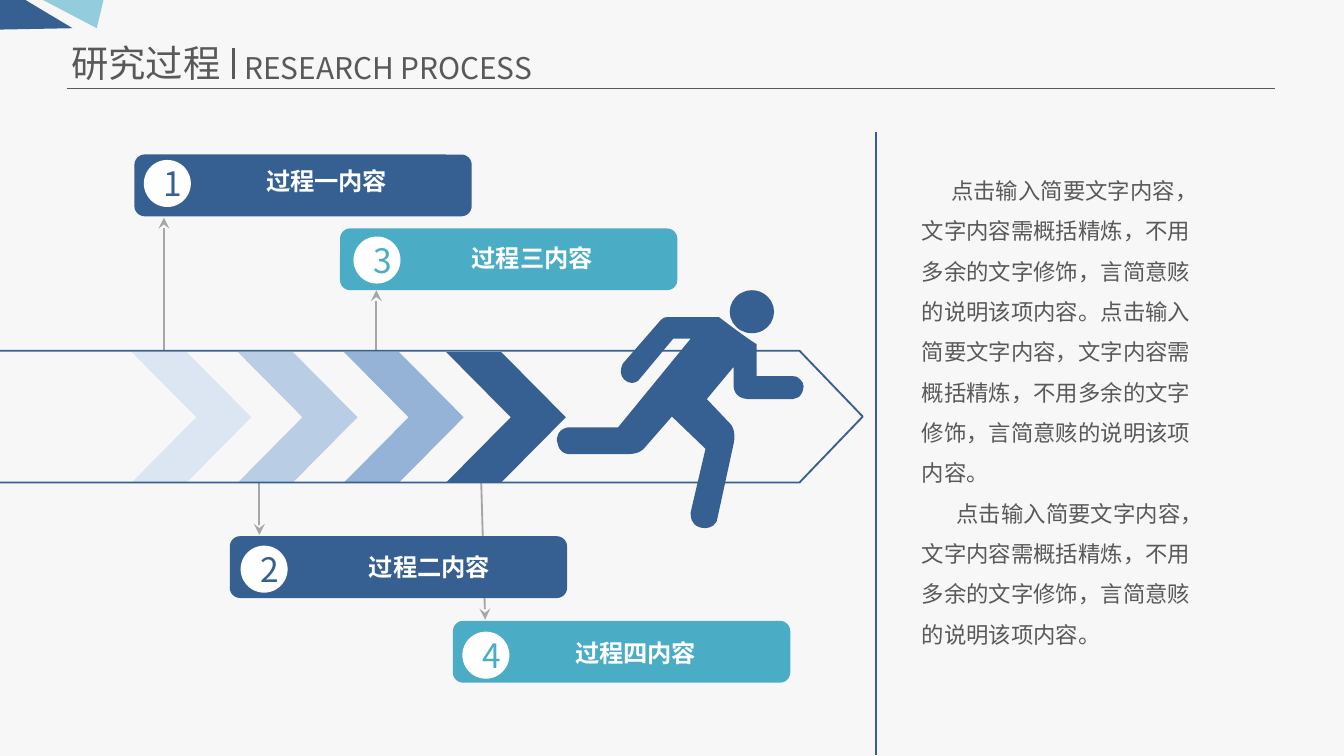
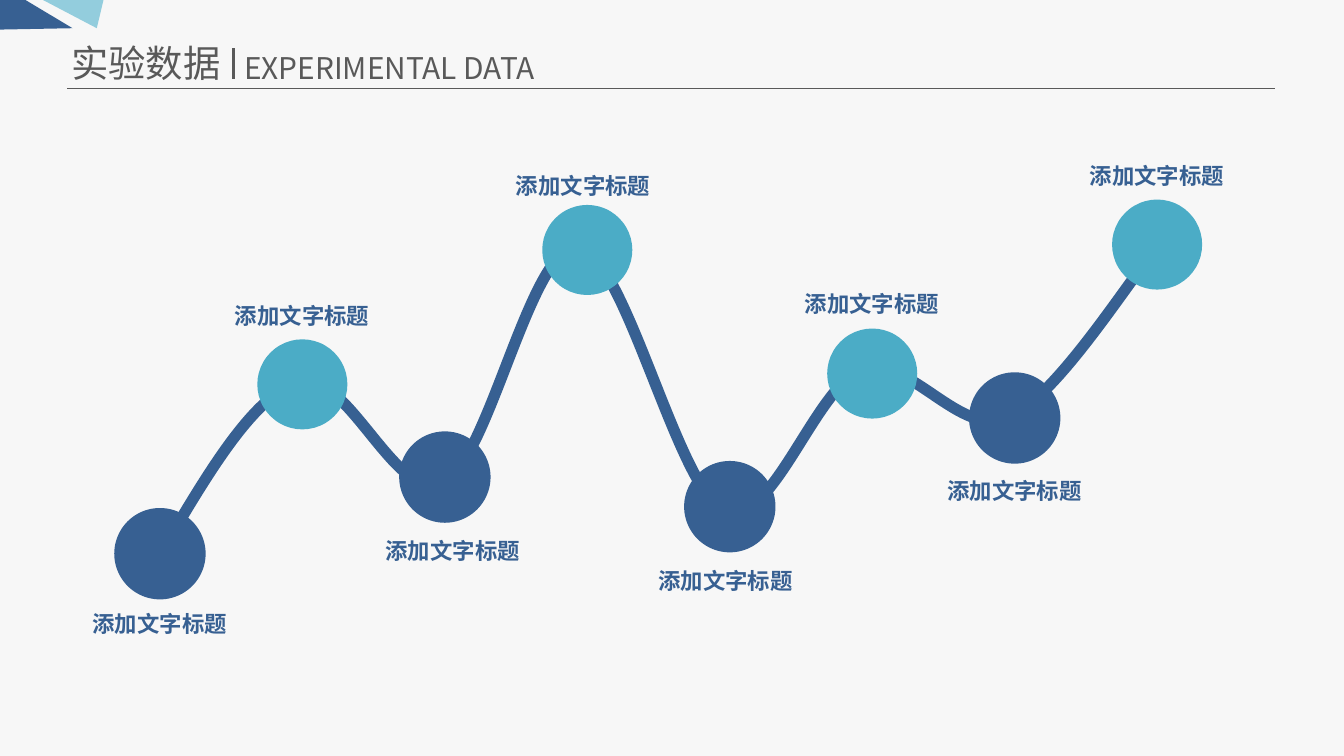
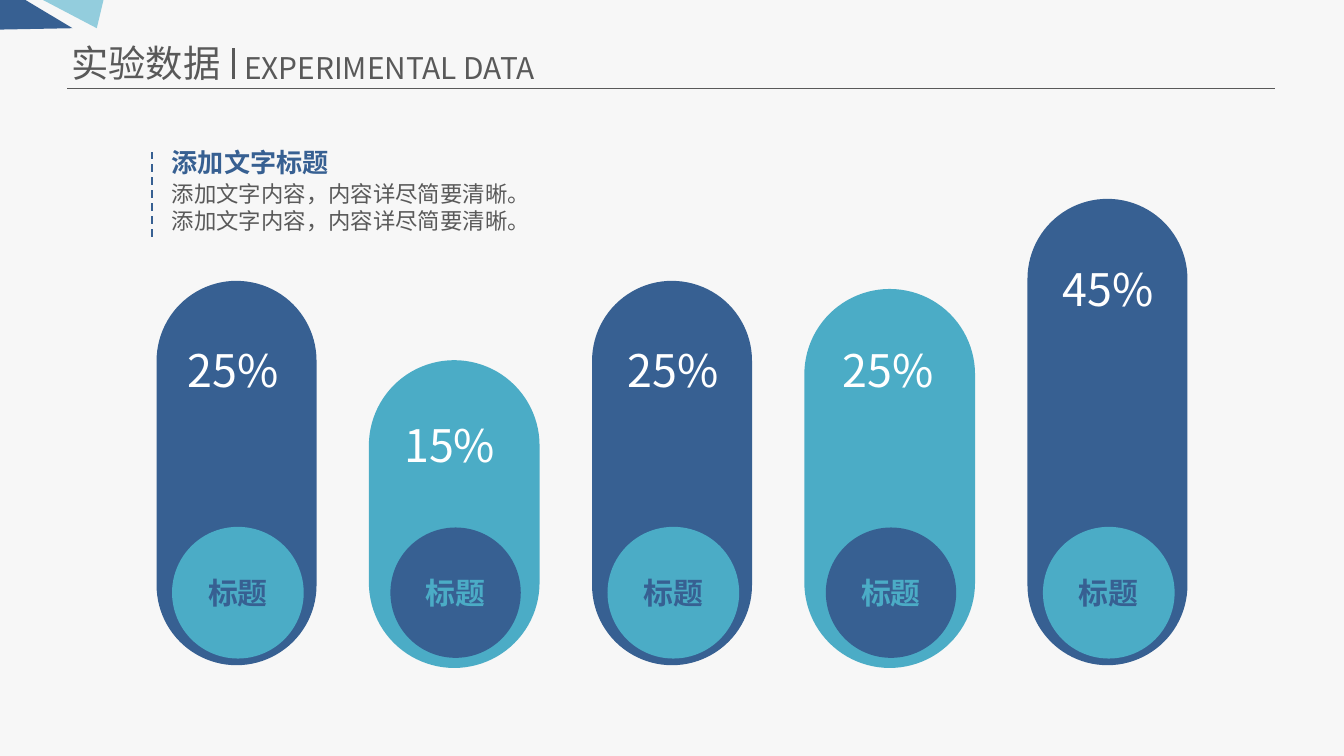
from lxml import etree
from pptx import Presentation
from pptx.dml.color import RGBColor
from pptx.enum.dml import MSO_LINE
from pptx.enum.shapes import MSO_CONNECTOR, MSO_SHAPE
from pptx.enum.text import MSO_AUTO_SIZE, PP_ALIGN
from pptx.oxml.ns import qn
from pptx.util import Inches, Pt

STRAIGHT = MSO_CONNECTOR.STRAIGHT
OVAL = MSO_SHAPE.OVAL
ROUNDED = MSO_SHAPE.ROUNDED_RECTANGLE
CHEVRON = MSO_SHAPE.CHEVRON
PENTAGON = MSO_SHAPE.PENTAGON
DASH = MSO_LINE.DASH
CENTER = PP_ALIGN.CENTER
GROW = MSO_AUTO_SIZE.SHAPE_TO_FIT_TEXT

FONT = "Noto Sans CJK SC"
BACKGROUND = "F7F7F7"
BLUE = "376092"
TEAL = "4BACC6"
LIGHT_TEAL = "93CDDD"
GREY = "595959"
ARROW_GREY = "A6A6A6"
WHITE = "FFFFFF"
color = RGBColor.from_string


def paint(shape, fill=None, line=None, width=1):
    shape.shadow.inherit = False
    if fill:
        shape.fill.solid()
        shape.fill.fore_color.rgb = color(fill)
    else:
        shape.fill.background()
    if line:
        shape.line.color.rgb = color(line)
        shape.line.width = Pt(width)
    else:
        shape.line.fill.background()
    return shape


def write(shape, lines, size, text_color, bold=False, alignment=None):
    """Fill a shape with one paragraph per line and return its text frame."""
    frame = shape.text_frame
    formats = {"name": FONT, "size": Pt(size), "bold": bold}
    for index, line in enumerate(lines):
        paragraph = frame.add_paragraph() if index else frame.paragraphs[0]
        paragraph.alignment = alignment
        run = paragraph.add_run()
        run.text = line
        run.font.color.rgb = color(text_color)
        for name, value in formats.items():
            setattr(run.font, name, value)
        etree.SubElement(run.font._element, qn("a:ea"), typeface=FONT)
    return frame


presentation = Presentation()
presentation.slide_width = Inches(10)
presentation.slide_height = Inches(10) * 9 // 16
master_fill = presentation.slide_master.background.fill
master_fill.solid()
master_fill.fore_color.rgb = color(BACKGROUND)

# Shared frame: corner triangles, title and its rules
titles = [
    ("研究过程", "RESEARCH PROCESS", 2.42),
    ("实验数据", "EXPERIMENTAL DATA", 2.49),
    ("实验数据", "EXPERIMENTAL DATA", 2.49),
]
corners = [
    (LIGHT_TEAL, [(0.32, 0), (0.72, 0.21), (0.77, 0)]),
    (BLUE, [(0.54, 0.21), (0.19, 0), (0, 0), (0, 0.22)]),
]
connectors = []
for chinese, english, english_width in titles:
    slide = presentation.slides.add_slide(presentation.slide_layouts[6])
    for fill, points in corners:
        start, *rest = [(Inches(x), Inches(y)) for x, y in points]
        builder = slide.shapes.build_freeform(*start)
        builder.add_line_segments(rest)
        paint(builder.convert_to_shape(), fill)
    for text, box, size in [
        (chinese, (0.43, 0.25, 1.32, 0.44), 20),
        (english, (1.72, 0.32, english_width, 0.37), 16),
    ]:
        title = slide.shapes.add_textbox(*map(Inches, box))
        frame = write(title, [text], size, GREY)
        frame.word_wrap = False
        frame.auto_size = GROW
    connectors += [
        (slide, (0.5, 0.66, 9.49, 0.66), GREY, 0.75, None),
        (slide, (1.74, 0.36, 1.74, 0.59), GREY, 1.5, None),
    ]

process_slide, curve_slide, pillar_slide = presentation.slides
connectors += [
    (process_slide, (6.52, 0.98, 6.52, 5.62), BLUE, 1, None),
    (process_slide, (2.8, 2.16, 2.8, 2.61), ARROW_GREY, 1, "arrow"),
    (process_slide, (1.22, 1.62, 1.22, 2.61), ARROW_GREY, 1, "arrow"),
    (process_slide, (3.61, 4.61, 3.58, 3.57), ARROW_GREY, 1, "arrow"),
    (process_slide, (1.93, 3.98, 1.93, 3.57), ARROW_GREY, 1, "arrow"),
    (pillar_slide, (1.13, 1.76, 1.13, 1.13), BLUE, 1, "dash"),
]
for slide, ends, line_color, width, style in connectors:
    connector = slide.shapes.add_connector(STRAIGHT, *map(Inches, ends))
    connector.line.color.rgb = color(line_color)
    connector.line.width = Pt(width)
    if style == "dash":
        connector.line.dash_style = DASH
    if style == "arrow":
        etree.SubElement(connector.line._get_or_add_ln(), qn("a:headEnd"), type="stealth")
    etree.SubElement(connector._element.spPr, qn("a:effectLst"))

# Slide 1: process band
for left, fill in [(0.98, "DCE6F2"), (1.77, "B9CDE5"), (2.56, "95B3D7"), (3.32, BLUE)]:
    box = (left, 2.62, 0.89, 0.97)
    chevron = paint(process_slide.shapes.add_shape(CHEVRON, *map(Inches, box)), fill)
    chevron.adjustments[0] = 0.54
band_box = (-0.04, 2.61, 6.46, 0.98)
band = paint(process_slide.shapes.add_shape(PENTAGON, *map(Inches, band_box)), line=BLUE)
band.adjustments[0] = 0.48

# Curved outlines: a pair is a straight step, six numbers are a Bézier step
runner = [
    (4.25, 3.18), (4.6, 3.18), (5.14, 2.52), (5.01, 2.52), (4.76, 2.82),
    (4.75, 2.84, 4.72, 2.85, 4.7, 2.85),
    (4.66, 2.85, 4.62, 2.81, 4.62, 2.77),
    (4.62, 2.74, 4.63, 2.71, 4.64, 2.7),
    (4.91, 2.39),
    (4.93, 2.37, 4.94, 2.36, 4.97, 2.36),
    (5.35, 2.36),
    (5.35, 2.36, 5.6, 2.55, 5.63, 2.56),
    (5.63, 2.8), (5.9, 2.8),
    (5.93, 2.8, 5.94, 2.81, 5.95, 2.82),
    (5.99, 2.85, 5.99, 2.9, 5.95, 2.95),
    (5.94, 2.96, 5.93, 2.96, 5.9, 2.97),
    (5.56, 2.97),
    (5.46, 2.96, 5.46, 2.88, 5.46, 2.88),
    (5.46, 2.73), (5.26, 2.97), (5.44, 3.16),
    (5.44, 3.16, 5.48, 3.21, 5.46, 3.3),
    (5.34, 3.85),
    (5.34, 3.9, 5.29, 3.93, 5.25, 3.93),
    (5.18, 3.93, 5.14, 3.89, 5.14, 3.83),
    (5.14, 3.82, 5.14, 3.81, 5.14, 3.81),
    (5.25, 3.34), (5, 3.1), (4.79, 3.34),
    (4.79, 3.34, 4.76, 3.38, 4.67, 3.38),
    (4.24, 3.38),
    (4.2, 3.38, 4.16, 3.36, 4.15, 3.3),
    (4.13, 3.25, 4.16, 3.19, 4.23, 3.18),
]
wave = [
    (1.53, 3.55, 1.88, 2.94, 2.23, 2.84),
    (2.59, 2.75, 2.95, 3.76, 3.3, 3.59),
    (3.64, 3.43, 3.95, 1.81, 4.3, 1.84),
    (4.65, 1.88, 5.04, 3.65, 5.39, 3.8),
    (5.74, 3.95, 6.07, 2.86, 6.42, 2.75),
    (6.77, 2.64, 7.14, 3.26, 7.5, 3.11),
    (7.86, 2.96, 8.41, 2.07, 8.61, 1.84),
]
for slide, start, steps, fill, line, closed in [
    (process_slide, (4.23, 3.18), runner, BLUE, None, True),
    (curve_slide, (1.17, 4.16), wave, None, BLUE, False),
]:
    numbers = [Inches(n) for step in steps for n in (step if len(step) == 6 else step * 3)]
    builder = slide.shapes.build_freeform(*map(Inches, start))
    builder.add_line_segments(list(zip(numbers[::2], numbers[1::2])), close=closed)
    shape = paint(builder.convert_to_shape(), fill, line, 6)
    outline = shape._element.find(".//" + qn("a:path"))
    segments = outline.findall(qn("a:lnTo"))
    for index in range(0, len(steps) * 3, 3):
        curve = etree.Element(qn("a:cubicBezTo"))
        outline.insert(outline.index(segments[index]), curve)
        for segment in segments[index:index + 3]:
            curve.append(segment[0])
            outline.remove(segment)

head_box = (5.43, 2.16, 0.33, 0.32)
paint(process_slide.shapes.add_shape(OVAL, *map(Inches, head_box)), BLUE)

# Slide 1: numbered cards and description
cards = [
    ("1", "过程一内容", BLUE, (1, 1.15), (1.07, 1.19), (1.35, 1.24, 2.16)),
    ("2", "过程二内容", BLUE, (1.71, 3.99), (1.79, 4.06), (2.18, 4.11, 2.03)),
    ("3", "过程三内容", TEAL, (2.53, 1.7), (2.63, 1.76), (2.92, 1.81, 2.08)),
    ("4", "过程四内容", TEAL, (3.37, 4.62), (3.44, 4.7), (3.65, 4.75, 2.16)),
]
for number, name, fill, card_corner, badge_corner, label_place in cards:
    card_box = (*card_corner, 2.51, 0.46)
    paint(process_slide.shapes.add_shape(ROUNDED, *map(Inches, card_box)), fill)
    badge_box = (*badge_corner, 0.35, 0.35)
    badge = paint(process_slide.shapes.add_shape(OVAL, *map(Inches, badge_box)), WHITE)
    write(badge, [number], 18, fill, alignment=CENTER)
    label = process_slide.shapes.add_textbox(*map(Inches, (*label_place, 0.22)))
    frame = write(label, [name], 13, WHITE, True, CENTER)
    frame.word_wrap = True
    frame.auto_size = GROW
    for side in ("left", "top", "right", "bottom"):
        setattr(frame, f"margin_{side}", 0)

description = process_slide.shapes.add_textbox(*map(Inches, (6.76, 1.17, 2.36, 3.7)))
sentence = "点击输入简要文字内容，文字内容需概括精炼，不用多余的文字修饰，言简意赅的说明该项内容。"
frame = write(description, [sentence * 2, sentence], 12, GREY)
frame.word_wrap = True
frame.auto_size = GROW
for paragraph, indent in zip(frame.paragraphs, (0.22, 0.26)):
    paragraph.line_spacing = 1.5
    paragraph._p.get_or_add_pPr().set("indent", str(Inches(indent)))

# Slide 2: nodes on the curve, (centre height, label left, label top)
nodes = [
    (4.12, 0.59, 4.49), (2.86, 1.65, 2.2), (3.55, 2.77, 3.95), (1.86, 3.74, 1.23),
    (3.77, 4.8, 4.17), (2.78, 5.89, 2.11), (3.11, 6.95, 3.5), (1.82, 8.01, 1.16),
]
for index, (middle, label_left, label_top) in enumerate(nodes):
    fill, diameter = (TEAL, 0.67) if index % 2 else (BLUE, 0.68)
    center = 1.19 + 1.06 * index
    box = (center - diameter / 2, middle - diameter / 2, diameter, diameter)
    paint(curve_slide.shapes.add_shape(OVAL, *map(Inches, box)), fill)
    label = curve_slide.shapes.add_textbox(*map(Inches, (label_left, label_top, 1.21, 0.3)))
    frame = write(label, ["添加文字标题"], 12, BLUE, True)
    frame.word_wrap = False
    frame.auto_size = GROW

# Slide 3: pillars, (value, top, height, value left, value top)
pillars = [
    ("25%", 2.09, 2.86, 1.3, 2.5),
    ("15%", 2.68, 2.29, 2.91, 3.06),
    ("25%", 2.09, 2.86, 4.57, 2.5),
    ("25%", 2.15, 2.82, 6.17, 2.5),
    ("45%", 1.48, 3.47, 7.81, 1.9),
]
for index, (value, top, height, value_left, value_top) in enumerate(pillars):
    fill, accent, width, diameter = (
        (TEAL, BLUE, 1.27, 0.97) if index % 2 else (BLUE, TEAL, 1.19, 0.98)
    )
    center = 1.76 + 1.62 * index
    box = (center - width / 2, top, width, height)
    pillar = paint(pillar_slide.shapes.add_shape(ROUNDED, *map(Inches, box)), fill)
    pillar.adjustments[0] = 0.5
    badge_box = (center + 0.01 - diameter / 2, 4.41 - diameter / 2, diameter, diameter)
    badge = paint(pillar_slide.shapes.add_shape(OVAL, *map(Inches, badge_box)), accent)
    write(badge, ["标题"], 16, fill, True, CENTER)
    label = pillar_slide.shapes.add_textbox(*map(Inches, (value_left, value_top, 0.9, 0.5)))
    frame = write(label, [value], 24, WHITE)
    frame.word_wrap = False
    frame.auto_size = GROW

for lines, box, size, text_color, bold in [
    (["添加文字标题"], (1.18, 1.04, 1.38, 0.34), 14, BLUE, True),
    (["添加文字内容，内容详尽简要清晰。"] * 2, (1.18, 1.29, 2.89, 0.5), 12, GREY, False),
]:
    note = pillar_slide.shapes.add_textbox(*map(Inches, box))
    frame = write(note, lines, size, text_color, bold)
    frame.word_wrap = False
    frame.auto_size = GROW

presentation.save("out.pptx")
